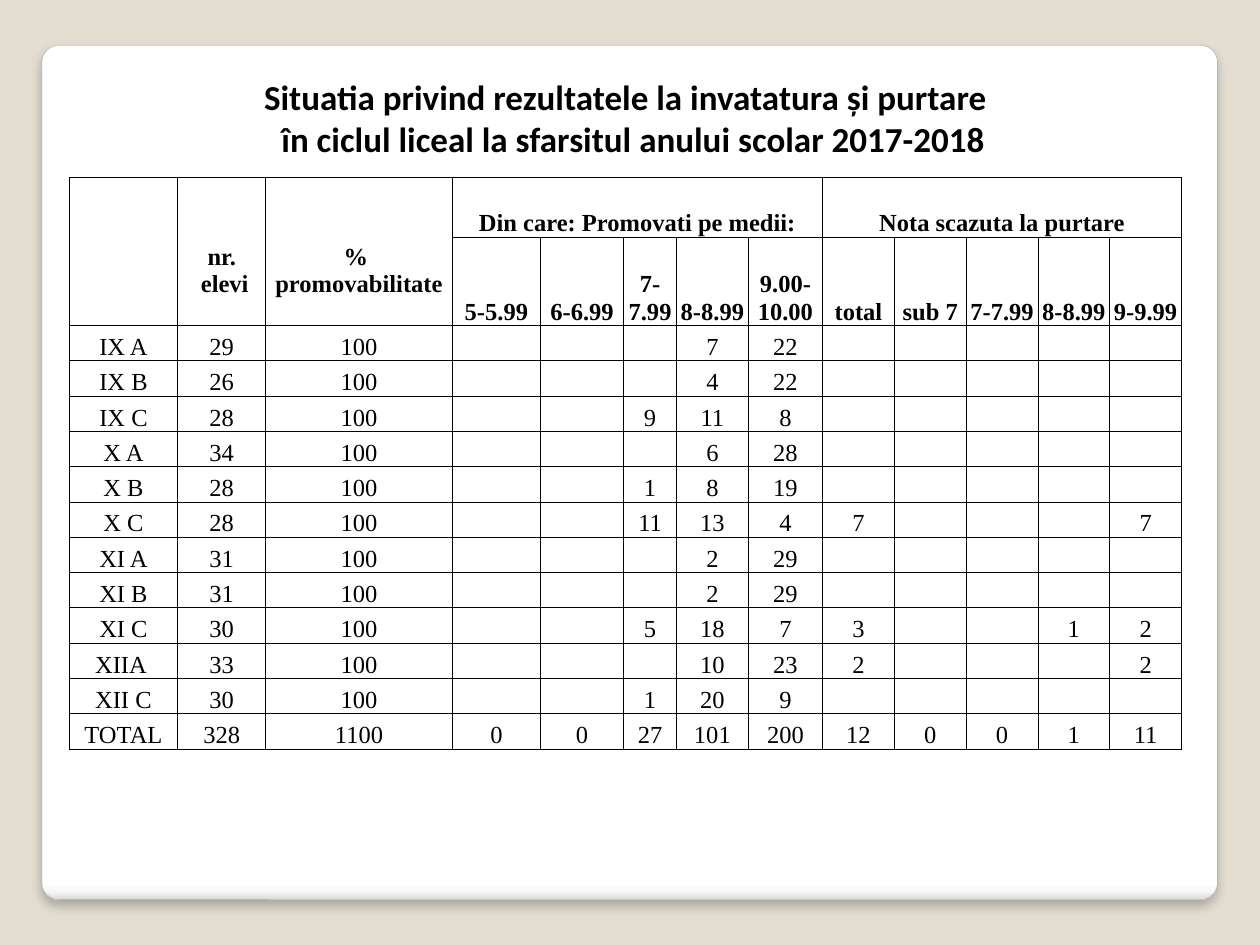
from dataclasses import dataclass

from lxml import etree
from pptx import Presentation
from pptx.dml.color import RGBColor
from pptx.enum import shapes, text
from pptx.oxml import parse_xml
from pptx.oxml.ns import nsdecls, qn
from pptx.util import Emu, Inches, Pt


@dataclass(frozen=True)
class Theme:
    """Colours, fonts and type sizes."""
    ground: str = "E3DED1"
    ink: str = "000000"
    edge: str = "A4A4A4"
    panel: tuple = ((0, "FFFFFF"), (98, "FFFFFF"), (99, "F7F7F7"), (100, "DADADA"))
    title_font: str = "Calibri"
    table_font: str = "Times New Roman"
    title_size: int = 20
    table_size: int = 14


THEME = Theme()
COLUMNS = (0.86, 0.7, 1.48, 0.7, 0.66, 0.42, 0.57, 0.59, 0.57, 0.57, 0.57, 0.57, 0.57)
ROWS = (0.47, 0.7) + (0.28,) * 12
SPANS = ((0, 0, 1, 0), (0, 1, 1, 1), (0, 2, 1, 2), (0, 3, 0, 7), (0, 8, 0, 12))
HEADERS = (
    "|nr.\n elevi|% \npromovabilitate|Din care: Promovati pe medii:|||||Nota scazuta la purtare||||",
    "|||5-5.99|6-6.99|7-7.99|8-8.99|9.00-10.00|total|sub 7|7-7.99|8-8.99|9-9.99",
)
RESULTS = (
    "IX A|29|100||||7|22|||||",
    "IX B|26|100||||4|22|||||",
    "IX C|28|100|||9|11|8|||||",
    "X A|34|100||||6|28|||||",
    "X B|28|100|||1|8|19|||||",
    "X C|28|100|||11|13|4|7||||7",
    "XI A|31|100||||2|29|||||",
    "XI B|31|100||||2|29|||||",
    "XI C|30|100|||5|18|7|3|||1|2",
    "XIIA |33|100||||10|23|2||||2",
    "XII C|30|100|||1|20|9|||||",
    "TOTAL|328|1100|0|0|27|101|200|12|0|0|1|11",
)


def place(prs, left, top, width, height):
    """Turn percentages of the slide's size into a box."""
    w, h = prs.slide_width / 100, prs.slide_height / 100
    return [Emu(round(v)) for v in (left * w, top * h, width * w, height * h)]


def add_run(p, words, font, size, bold):
    """Add one run of styled text."""
    r = p.add_run()
    r.text = words
    r.font.name, r.font.size, r.font.bold = font, Pt(size), bold
    r.font.color.rgb = RGBColor.from_string(THEME.ink)


def add_panel(s, box):
    """Draw the rounded white panel with its soft shadow."""
    sp = s.shapes.add_shape(shapes.MSO_SHAPE.ROUNDED_RECTANGLE, *box)
    sp.adjustments[0] = 0.02
    stops = "".join(f'<a:gs pos="{pos * 1000}"><a:srgbClr val="{color}"/></a:gs>'
                    for pos, color in THEME.panel)
    sp._element.spPr.append(parse_xml(
        f'<a:gradFill {nsdecls("a")}><a:gsLst>{stops}</a:gsLst>'
        '<a:lin ang="5400000" scaled="0"/></a:gradFill>'))
    sp.line.color.rgb = RGBColor.from_string(THEME.edge)
    sp.line.width = Pt(0.16)
    sp.shadow.inherit = False
    sp._element.spPr.find(qn("a:effectLst")).append(parse_xml(
        f'<a:outerShdw {nsdecls("a")} blurRad="{Pt(6)}" dist="{Pt(4)}" dir="5400000" '
        f'rotWithShape="0"><a:srgbClr val="{THEME.ink}"><a:alpha val="25000"/>'
        '</a:srgbClr></a:outerShdw>'))


def add_title(s, box):
    """Write the two-line centred title."""
    tf = s.shapes.add_textbox(*box).text_frame
    tf.word_wrap = True
    p = tf.paragraphs[0]
    p.alignment = text.PP_ALIGN.CENTER
    style = THEME.title_font, THEME.title_size, True
    add_run(p, "Situatia privind rezultatele la invatatura și purtare ", *style)
    p.add_line_break()
    add_run(p, " în ciclul liceal la sfarsitul anului scolar 2017-2018", *style)


def add_borders(cell):
    """Rule all four sides of a cell."""
    tcPr = cell._tc.get_or_add_tcPr()
    for side in ("lnL", "lnR", "lnT", "lnB"):
        ln = etree.SubElement(tcPr, qn(f"a:{side}"), w=str(Pt(0.5)))
        fill = etree.SubElement(ln, qn("a:solidFill"))
        etree.SubElement(fill, qn("a:srgbClr"), val=THEME.ink)


def fill_cell(cell, words, bold):
    """Style a cell and write its lines."""
    add_borders(cell)
    cell.fill.background()
    cell.vertical_anchor = text.MSO_ANCHOR.BOTTOM
    cell.margin_left = cell.margin_right = cell.margin_top = Inches(0.01)
    lines = words.split("\n")
    cell.margin_bottom = Inches(0.22 if len(lines) > 1 else 0)
    tf = cell.text_frame
    for i, line in enumerate(lines):
        p = tf.add_paragraph() if i else tf.paragraphs[0]
        p.alignment = text.PP_ALIGN.CENTER
        if line:
            add_run(p, line, THEME.table_font, THEME.table_size, bold)
        else:
            end = etree.SubElement(p._p, qn("a:endParaRPr"))
            end.set("sz", str(THEME.table_size * 100))


def add_results(s, box):
    """Build the table of results by class."""
    table = s.shapes.add_table(len(ROWS), len(COLUMNS), *box).table
    table.first_row = table.horz_banding = False
    for column, share in zip(table.columns, COLUMNS):
        column.width = Emu(round(box[2] * share / sum(COLUMNS)))
    for row, share in zip(table.rows, ROWS):
        row.height = Emu(round(box[3] * share / sum(ROWS)))
    for top, left, bottom, right in SPANS:
        table.cell(top, left).merge(table.cell(bottom, right))
    for i, line in enumerate(HEADERS + RESULTS):
        for j, words in enumerate(line.split("|")):
            fill_cell(table.cell(i, j), words, i < len(HEADERS))


def main():
    """Build and save the slide."""
    prs = Presentation()
    prs.slide_width, prs.slide_height = Inches(10), Inches(7.5)
    s = prs.slides.add_slide(prs.slide_layouts[6])
    s.background.fill.solid()
    s.background.fill.fore_color.rgb = RGBColor.from_string(THEME.ground)
    add_panel(s, place(prs, 3.33, 4.8, 93.3, 90.4))
    add_results(s, place(prs, 5.5, 18.8, 88.3, 60.53))
    add_title(s, place(prs, 19.5, 7.33, 60.9, 10.27))
    prs.save("out.pptx")


if __name__ == "__main__":
    main()
